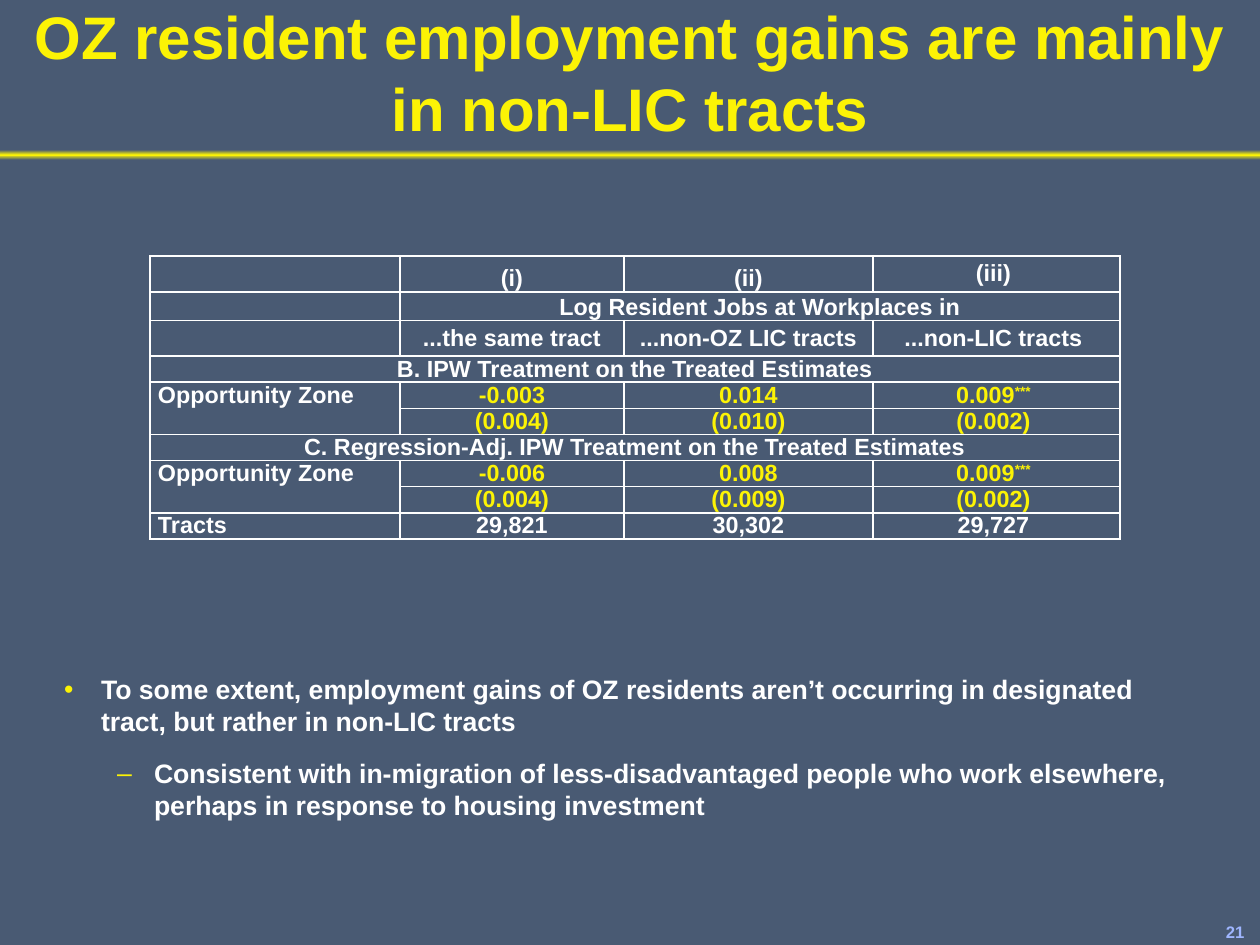
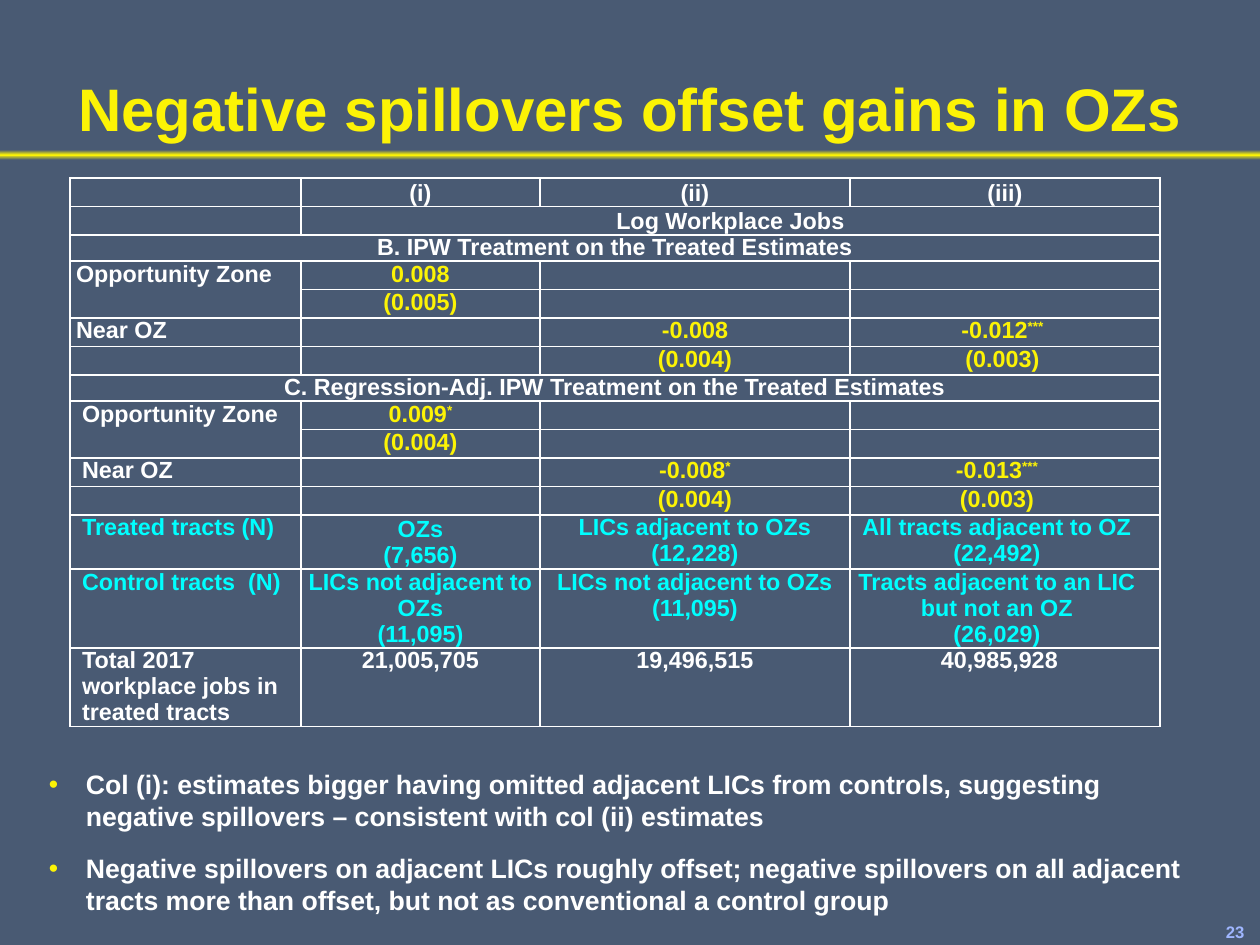
from lxml import etree
from pptx import Presentation
from pptx.dml.color import RGBColor
from pptx.enum.shapes import MSO_SHAPE
from pptx.enum.text import MSO_ANCHOR, MSO_AUTO_SIZE, PP_ALIGN
from pptx.oxml.ns import qn
from pptx.util import Pt

PX = 7620  # EMU per px, 120 px to the inch
WIDTH, HEIGHT = 1260, 945
FONT = "Arial"
SLATE, YELLOW, WHITE, CYAN, LILAC = "495A73", "FCF305", "FFFFFF", "00FFFF", "9FB6FF"
CENTER, LEFT = PP_ALIGN.CENTER, PP_ALIGN.LEFT
TOP, MIDDLE, BOTTOM = MSO_ANCHOR.TOP, MSO_ANCHOR.MIDDLE, MSO_ANCHOR.BOTTOM
RECTANGLE, NO_AUTOFIT = MSO_SHAPE.RECTANGLE, MSO_AUTO_SIZE.NONE
TABLE_PITCH, BODY_PITCH, TITLE_PITCH = 15.6, 19.2, 43.2  # line pitch, points
BULLETS = [("•", 37), ("–", 90)]  # per level: mark, text indent
HANGING = 37

PANEL_B = "B. IPW Treatment on the Treated Estimates"
PANEL_C = "C. Regression-Adj. IPW Treatment on the Treated Estimates"

# Rows: height in lines, value colour, anchor, (label inset, last column inset), cells
SLIDES = [
    {
        "title": "OZ resident employment gains are mainly in non-LIC tracts",
        "number": "21",
        "table": {
            "place": (150, 256, 281),
            "columns": [250, 224, 249, 247],
            "inset": 8,
            "rows": [
                (1.37, WHITE, BOTTOM, (0, 6), ["", "(i)", "(ii)", "(iii)"]),
                (1, WHITE, BOTTOM, (0, 0), ["", "Log Resident Jobs at Workplaces in", "", ""]),
                (1.37, WHITE, MIDDLE, (0, 6),
                 ["", "...the same tract", "...non-OZ LIC tracts", "...non-LIC tracts"]),
                (1, WHITE, TOP, (0, 0), [PANEL_B, "", "", ""]),
                (1, YELLOW, BOTTOM, (0, 6), ["Opportunity Zone", "-0.003", "0.014", "0.009***"]),
                (1, YELLOW, BOTTOM, (0, 6), ["", "(0.004)", "(0.010)", "(0.002)"]),
                (1, WHITE, TOP, (0, 0), [PANEL_C, "", "", ""]),
                (1, YELLOW, BOTTOM, (0, 6), ["Opportunity Zone", "-0.006", "0.008", "0.009***"]),
                (1, YELLOW, BOTTOM, (0, 6), ["", "(0.004)", "(0.009)", "(0.002)"]),
                (1, WHITE, BOTTOM, (0, 6), ["Tracts", "29,821", "30,302", "29,727"]),
            ],
            "merges": [(1, 1, 1, 3), (3, 0, 3, 3), (4, 0, 5, 0), (6, 0, 6, 3), (7, 0, 8, 0)],
            "raised": (0, 3, 0, 5),
        },
        "body_at": (52, 672),
        "body": [
            (0, "To some extent, employment gains of OZ residents aren’t occurring in "
                "designated tract, but rather in non-LIC tracts"),
            (1, "Consistent with in-migration of less-disadvantaged people who work "
                "elsewhere, perhaps in response to housing investment"),
        ],
    },
    {
        "title": "Negative spillovers offset gains in OZs",
        "number": "23",
        "table": {
            "place": (70, 178, 527),
            "columns": [231, 239, 310, 310],
            "inset": 6,
            "rows": [
                (1, WHITE, BOTTOM, (0, 0), ["", "(i)", "(ii)", "(iii)"]),
                (1, WHITE, BOTTOM, (0, 0), ["", "Log Workplace Jobs", "", ""]),
                (1, WHITE, TOP, (0, 0), [PANEL_B, "", "", ""]),
                (1, YELLOW, TOP, (0, 5), ["Opportunity Zone", "0.008", "", ""]),
                (1, YELLOW, TOP, (0, 5), ["", "(0.005)", "", ""]),
                (1, YELLOW, TOP, (0, 5), ["Near OZ", "", "-0.008", "-0.012***"]),
                (1, YELLOW, TOP, (0, 5), ["", "", "(0.004)", "(0.003)"]),
                (1, WHITE, TOP, (0, 0), [PANEL_C, "", "", ""]),
                (1, YELLOW, TOP, (6, 16), ["Opportunity Zone", "0.009*", "", ""]),
                (1, YELLOW, TOP, (6, 16), ["", "(0.004)", "", ""]),
                (1, YELLOW, TOP, (6, 16), ["Near OZ", "", "-0.008*", "-0.013***"]),
                (1, YELLOW, TOP, (6, 16), ["", "", "(0.004)", "(0.003)"]),
                (2.07, CYAN, TOP, (6, 16),
                 ["Treated tracts (N)", "OZs\n(7,656)", "LICs adjacent to OZs\n(12,228)",
                  "All tracts adjacent to OZ\n(22,492)"]),
                (3, CYAN, TOP, (6, 16),
                 ["Control tracts  (N)", "LICs not adjacent to OZs\n(11,095)",
                  "LICs not adjacent to OZs\n(11,095)",
                  "Tracts adjacent to an LIC but not an OZ\n(26,029)"]),
                (3, WHITE, TOP, (6, 11),
                 ["Total 2017 workplace jobs in treated tracts", "21,005,705", "19,496,515",
                  "40,985,928"]),
            ],
            "merges": [(1, 1, 1, 3), (2, 0, 2, 3), (3, 0, 4, 0), (7, 0, 7, 3), (8, 0, 9, 0)],
            "raised": (12, 1, 2, 0),
        },
        "body_at": (37, 767),
        "body": [
            (0, "Col (i): estimates bigger having omitted adjacent LICs from controls, "
                "suggesting negative spillovers – consistent with col (ii) estimates"),
            (0, "Negative spillovers on adjacent LICs roughly offset; negative spillovers on "
                "all adjacent tracts more than offset, but not as conventional a control group"),
        ],
    },
]


def px(length):
    return round(length * PX)


def color(value):
    return RGBColor.from_string(value)


def format_paragraph(paragraph, size, ink, align, pitch):
    paragraph.alignment = align
    paragraph.line_spacing = Pt(pitch)
    paragraph.space_before = Pt(0)
    for run in paragraph.runs:
        font = run.font
        font.name, font.size, font.bold = FONT, Pt(size), True
        font.color.rgb = color(ink)


def set_frame(frame, anchor, left, top):
    frame.auto_size = NO_AUTOFIT
    frame.vertical_anchor = anchor
    frame.margin_left = frame.margin_right = px(left)
    frame.margin_top = frame.margin_bottom = px(top)


def place(shape, left, top, width, height):
    shape.left, shape.top, shape.width, shape.height = map(px, (left, top, width, height))


def add_band(slide):
    band = slide.shapes.add_shape(RECTANGLE, 0, px(150), px(WIDTH), px(10))
    band.shadow.inherit = False
    band.line.fill.background()
    band.fill.gradient()
    band.fill.gradient_angle = 90
    stops = band._element.spPr.find(".//" + qn("a:gsLst"))
    for stop in list(stops):
        stops.remove(stop)
    for percent, ink in [(0, SLATE), (50, YELLOW), (100, SLATE)]:
        stop = etree.SubElement(stops, qn("a:gs"), pos=str(percent * 1000))
        etree.SubElement(stop, qn("a:srgbClr"), val=ink)


def add_number(slide, number):
    box = slide.shapes.add_textbox(px(1218), px(918), px(42), px(28))
    set_frame(box.text_frame, TOP, 8, 4)
    box.text_frame.word_wrap = False
    box.text_frame.text = number
    format_paragraph(box.text_frame.paragraphs[0], 10, LILAC, LEFT, 12)


def fill_title(slide, text):
    title = slide.shapes.title
    place(title, 0, 0, WIDTH, 150)
    set_frame(title.text_frame, BOTTOM, 12, 6)
    title.text_frame.text = text
    format_paragraph(title.text_frame.paragraphs[0], 36, YELLOW, CENTER, TITLE_PITCH)


def fill_body(slide, position, items):
    body = slide.placeholders[1]
    place(body, *position, 1157, 150)
    frame = body.text_frame
    set_frame(frame, MIDDLE, 12, 6)
    frame.text = "\n".join(text for _, text in items)
    for paragraph, (level, _) in zip(frame.paragraphs, items):
        paragraph.level = level
        format_paragraph(paragraph, 16, WHITE, LEFT, BODY_PITCH)
        paragraph.space_after = Pt(12)
        mark, indent = BULLETS[level]
        properties = paragraph._p.get_or_add_pPr()
        properties.set("marL", str(px(indent)))
        properties.set("indent", str(px(-HANGING)))
        bullet_color = etree.SubElement(properties, qn("a:buClr"))
        etree.SubElement(bullet_color, qn("a:srgbClr"), val=YELLOW)
        etree.SubElement(properties, qn("a:buFont"), typeface=FONT)
        etree.SubElement(properties, qn("a:buChar"), char=mark)


def style_cell(cell):
    properties = cell._tc.get_or_add_tcPr()
    for side in ("lnL", "lnR", "lnT", "lnB"):
        line = etree.SubElement(properties, qn("a:" + side), w=str(Pt(1)))
        fill = etree.SubElement(line, qn("a:solidFill"))
        etree.SubElement(fill, qn("a:srgbClr"), val=WHITE)
    cell.fill.background()


def write_cell(cell, text, ink, align):
    cell.text_frame.text = text.rstrip("*")
    stars = text[len(text.rstrip("*")):]
    if stars:
        run = cell.text_frame.paragraphs[0].add_run()
        run.text = stars
        run.font._element.set("baseline", "30000")
    for paragraph in cell.text_frame.paragraphs:
        format_paragraph(paragraph, 14, ink, align, TABLE_PITCH)
        if not text:
            paragraph._p.get_or_add_endParaRPr().set("sz", "1400")


def add_estimates(slide, content):
    left, top, height = content["place"]
    columns, rows, inset = content["columns"], content["rows"], content["inset"]
    table = slide.shapes.add_table(len(rows), len(columns), px(left), px(top),
                                   px(sum(columns)), px(height)).table
    table.first_row = table.horz_banding = False
    for column, width in zip(table.columns, columns):
        column.width = px(width)
    line_height = height / sum(row[0] for row in rows)
    last = len(columns) - 1
    for r, (lines, ink, anchor, (label_pad, last_pad), cells) in enumerate(rows):
        table.rows[r].height = px(lines * line_height)
        for c, text in enumerate(cells):
            cell = table.cell(r, c)
            style_cell(cell)
            is_label = c == 0 and text not in (PANEL_B, PANEL_C)
            label_ink = CYAN if ink == CYAN else WHITE
            write_cell(cell, text, label_ink if c == 0 else ink, LEFT if is_label else CENTER)
            cell.vertical_anchor = TOP if c == 0 else anchor
            cell.margin_left = px(inset + (label_pad if c == 0 else 0))
            cell.margin_right = px(inset + (last_pad if c == last else 0))
            cell.margin_top = cell.margin_bottom = 0
    for r1, c1, r2, c2 in content["merges"]:
        table.cell(r1, c1).merge(table.cell(r2, c2))
    # One cell sits off its row's baseline
    r, c, above, below = content["raised"]
    table.cell(r, c).margin_top, table.cell(r, c).margin_bottom = px(above), px(below)


def main():
    presentation = Presentation()
    presentation.slide_width, presentation.slide_height = px(WIDTH), px(HEIGHT)
    background = presentation.slide_master.background.fill
    background.solid()
    background.fore_color.rgb = color(SLATE)
    for content in SLIDES:
        slide = presentation.slides.add_slide(presentation.slide_layouts[1])
        add_number(slide, content["number"])
        add_band(slide)
        fill_title(slide, content["title"])
        add_estimates(slide, content["table"])
        fill_body(slide, content["body_at"], content["body"])
    presentation.save("out.pptx")


if __name__ == "__main__":
    main()
